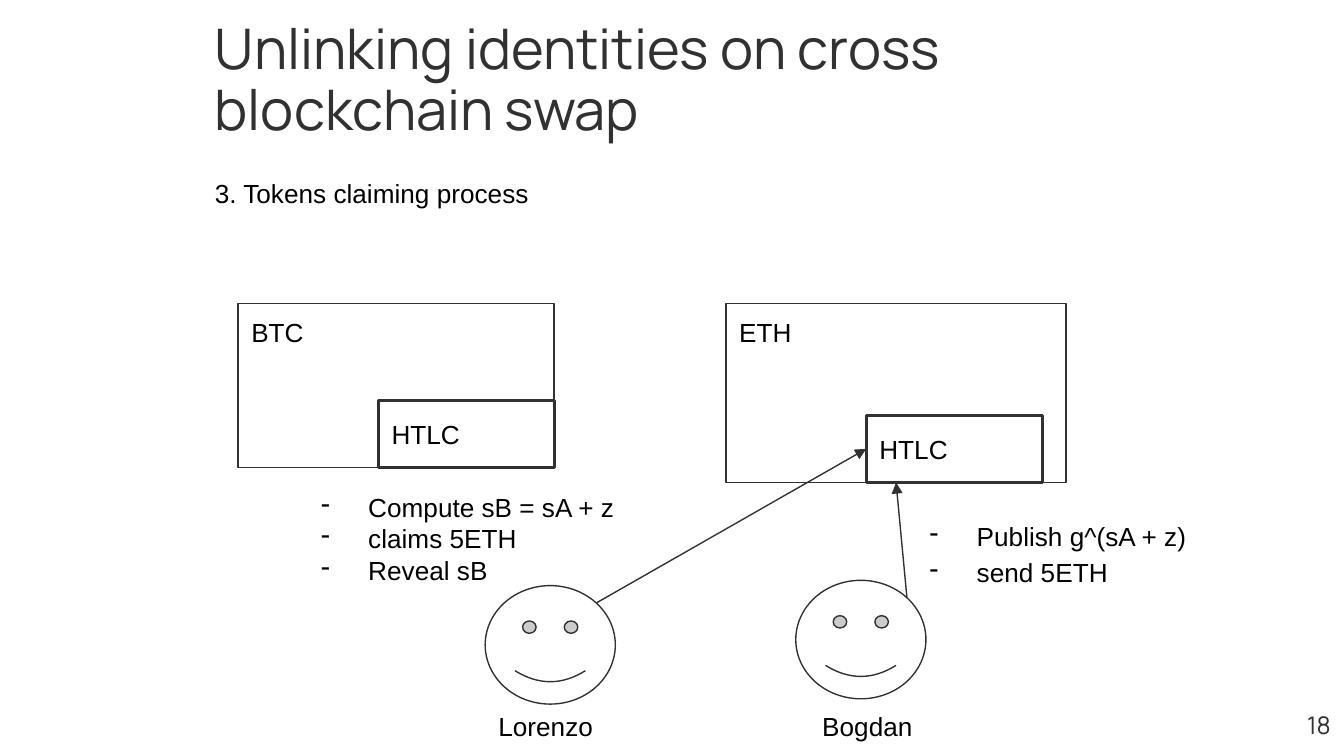
import pptx
import pptx.util
import pptx.dml.color
import pptx.enum.shapes
import pptx.enum.text
import pptx.oxml.ns
import lxml.etree

Cm, Pt = pptx.util.Cm, pptx.util.Pt
SHAPE = pptx.enum.shapes.MSO_SHAPE
ANCHOR = pptx.enum.text.MSO_ANCHOR
ALIGN = pptx.enum.text.PP_ALIGN
COLORS = {"ink": "313131", "text": "000000", "paper": "FFFFFF"}
INSET = 0.25
LABEL_HEIGHT = 1.1


def rgb(name):
    """Return the palette colour with this name."""
    return pptx.dml.color.RGBColor.from_string(COLORS[name])


def add_child(parent, tag, **attributes):
    """Append a DrawingML element to a parent element."""
    child = lxml.etree.SubElement(parent, pptx.oxml.ns.qn(tag))
    for name, value in attributes.items():
        child.set(name, value)
    return child


def write(shape, lines, size=14, font="Arial", color="text", align=ALIGN.LEFT,
          anchor=ANCHOR.TOP, spacing=None, bullet=None):
    """Fill a shape with evenly formatted paragraphs."""
    frame = shape.text_frame
    frame.auto_size = pptx.enum.text.MSO_AUTO_SIZE.NONE
    frame.word_wrap = True
    frame.vertical_anchor = anchor
    frame.margin_left = frame.margin_right = Cm(INSET)
    frame.margin_top = frame.margin_bottom = Cm(INSET)
    frame.text = "\n".join(lines)
    for paragraph in frame.paragraphs:
        paragraph.alignment = align
        if spacing:
            paragraph.line_spacing = spacing
        if bullet:
            properties = paragraph._p.get_or_add_pPr()
            properties.set("marL", str(Cm(1.27)))
            properties.set("indent", str(Cm(-0.89)))
            bullet_color = add_child(properties, "a:buClr")
            add_child(bullet_color, "a:srgbClr", val=COLORS["text"])
            add_child(properties, "a:buChar", char=bullet)
        paragraph.font.size = Pt(size)
        paragraph.font.name = font
        paragraph.font.color.rgb = rgb(color)


def add_text(slide, left, top, width, height, lines, **style):
    """Add a formatted text box."""
    box = slide.shapes.add_textbox(Cm(left), Cm(top), Cm(width), Cm(height))
    write(box, lines, **style)


def add_outlined(slide, kind, left, top, width, height, weight=0.75):
    """Add a white shape with a dark outline."""
    shape = slide.shapes.add_shape(kind, Cm(left), Cm(top), Cm(width), Cm(height))
    shape.shadow.inherit = False
    shape.fill.solid()
    shape.fill.fore_color.rgb = rgb("paper")
    shape.line.color.rgb = rgb("ink")
    shape.line.width = Pt(weight)
    return shape


def add_heading(slide, left, top, width, height):
    """Place the title and the step name below it."""
    title = slide.shapes.title
    title.left, title.top = Cm(left), Cm(top)
    title.width, title.height = Cm(width), Cm(height)
    write(title, ["Unlinking identities on cross blockchain swap"], size=30,
          font="Manrope", color="ink", anchor=ANCHOR.MIDDLE, spacing=0.9)
    add_text(slide, left, top + height, 9.17, LABEL_HEIGHT, ["3. Tokens claiming process"])


def add_chain(slide, left, top, width, height, name):
    """Draw a blockchain with its contract on the bottom edge; return both."""
    chain = add_outlined(slide, SHAPE.RECTANGLE, left, top, width, height)
    add_text(slide, left, top, 1.52, LABEL_HEIGHT, [name])
    contract_height = 1.27
    contract = add_outlined(slide, SHAPE.RECTANGLE, left + 2.65,
                            top + height - contract_height, 3.33, contract_height, 1.5)
    write(contract, ["HTLC"], anchor=ANCHOR.MIDDLE)
    return chain, contract


def add_person(slide, left, top, width, height, name, name_left, target, site):
    """Draw a named face with an arrow from its upper right to a target side."""
    face = add_outlined(slide, SHAPE.SMILEY_FACE, left, top, width, height)
    face.adjustments[0] = 0.05
    add_text(slide, name_left, 13.18, width, LABEL_HEIGHT, [name])
    start_x, start_y = Cm(left + 0.854 * width), Cm(top + 0.146 * height)
    arrow = slide.shapes.add_connector(
        pptx.enum.shapes.MSO_CONNECTOR.STRAIGHT, start_x, start_y, start_x, start_y)
    arrow.end_connect(target, site)
    arrow.line.color.rgb = rgb("ink")
    arrow.line.width = Pt(0.75)
    add_child(arrow.line._get_or_add_ln(), "a:tailEnd", type="triangle")
    add_child(arrow._element.spPr, "a:effectLst")


def main():
    """Build and save the slide."""
    deck = pptx.Presentation()
    deck.slide_width, deck.slide_height = Cm(25.4), Cm(14.29)
    slide = deck.slides.add_slide(deck.slide_layouts[5])

    add_heading(slide, 3.81, 0, 15.21, 3.1)
    add_text(slide, 23.88, 13.18, 1.52, LABEL_HEIGHT, ["18"], size=13,
             font="Manrope", color="ink", align=ALIGN.RIGHT)
    add_chain(slide, 4.5, 5.74, 5.97, 3.1, "BTC")
    eth, eth_contract = add_chain(slide, 13.72, 5.74, 6.43, 3.38, "ETH")

    add_person(slide, 9.17, 11.07, 2.46, 2.24, "Lorenzo", 9.17, eth_contract, 1)
    add_person(slide, 15.04, 10.97, 2.46, 2.24, "Bogdan", 15.29, eth, 2)
    add_text(slide, 16.94, 9.5, 6.12, 1.8, ["Publish g^(sA + z)", "send 5ETH"],
             bullet="-", spacing=1.15)
    add_text(slide, 5.44, 9.04, 6.71, 2.31,
             ["Compute sB = sA + z", "claims 5ETH", "Reveal sB"], bullet="-")

    deck.save("out.pptx")


if __name__ == "__main__":
    main()
